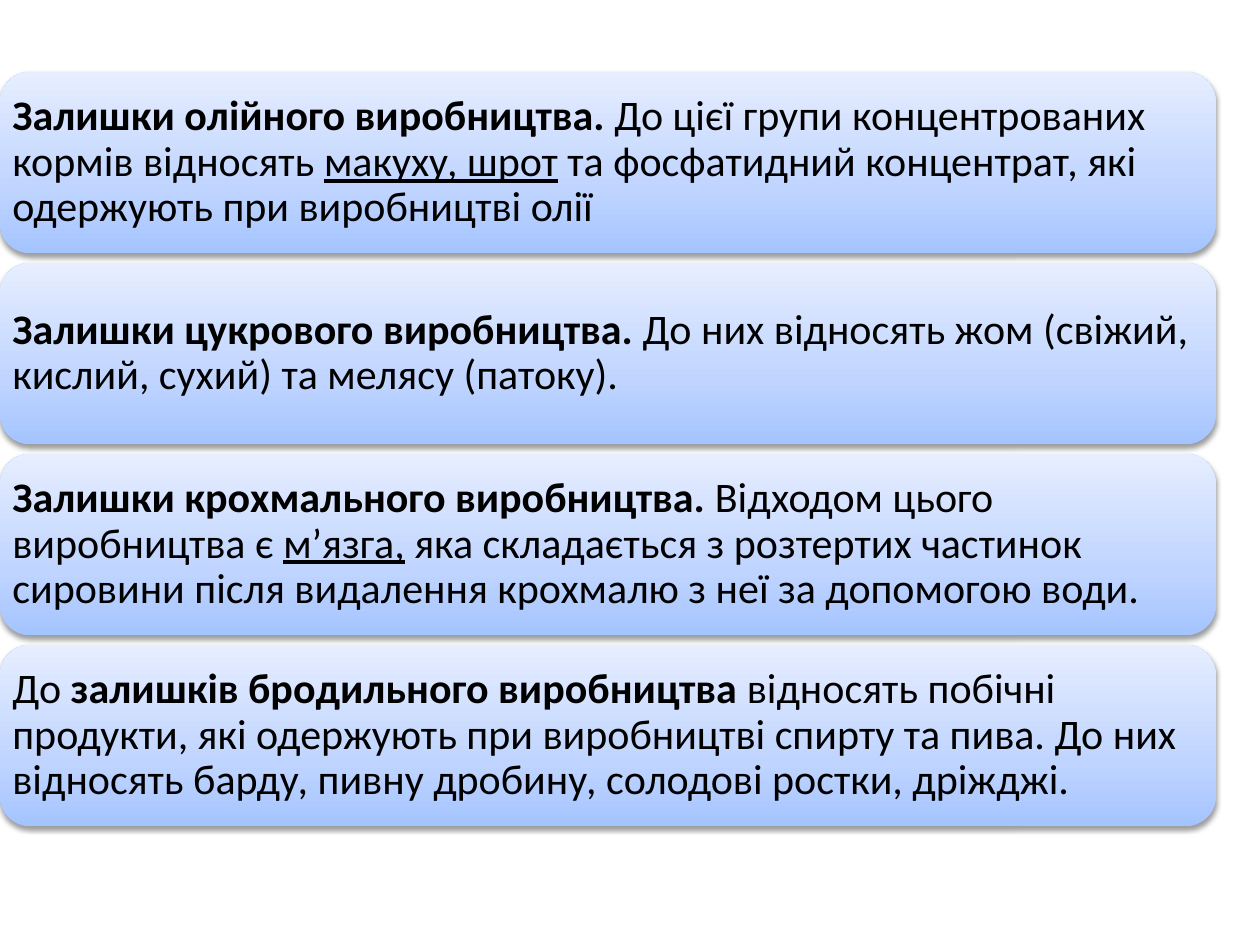
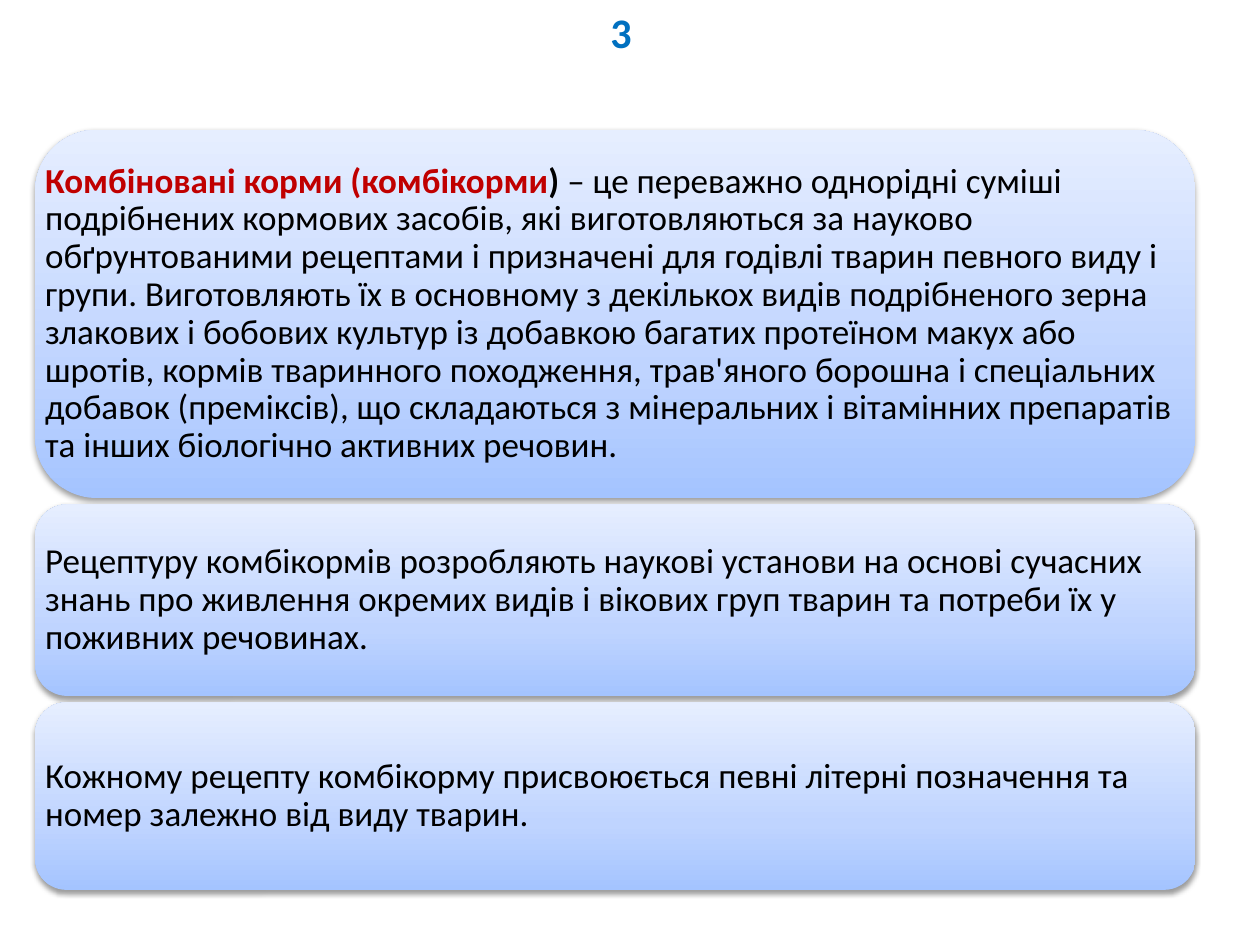
from dataclasses import dataclass

from pptx import Presentation
from pptx.dml.color import RGBColor as RGB
from pptx.enum.shapes import MSO_SHAPE as Preset
from pptx.enum.text import MSO_ANCHOR as Anchor, MSO_AUTO_SIZE as AutoSize, PP_ALIGN as Align
from pptx.oxml import parse_xml
from pptx.oxml.ns import nsdecls, qn
from pptx.util import Cm, Pt


@dataclass(frozen=True)
class Theme:
    font: str = "Calibri"
    text: str = "000000"
    term: str = "C00000"
    number: str = "0070C0"
    large: int = 24
    medium: int = 20
    # Gradient stops of a panel, from bottom to top
    panel: tuple = ((0, "A4C4FF"), (35, "BFD4FF"), (100, "E6EEFF"))


THEME = Theme()

# Run styles
PLAIN = {}
BOLD = {"bold": True}
UNDERLINED = {"underline": True}
TERM = {"bold": True, "color": THEME.term}

RESIDUES = [
    [("Залишки олійного виробництва. ", BOLD),
     ("До цієї групи концентрованих кормів відносять ", PLAIN),
     ("макуху, шрот", UNDERLINED),
     (" та фосфатидний концентрат, які одержують при виробництві олії", PLAIN)],
    [("Залишки цукрового виробництва.", BOLD),
     (" До них відносять жом (свіжий, кислий, сухий) та мелясу (патоку).", PLAIN)],
    [("Залишки крохмального виробництва. ", BOLD),
     ("Відходом цього виробництва є ", PLAIN),
     ("м’язга,", UNDERLINED),
     (" яка складається з розтертих частинок сировини після видалення крохмалю "
      "з неї за допомогою води.", PLAIN)],
    [("До ", PLAIN),
     ("залишків бродильного виробництва ", BOLD),
     ("відносять побічні продукти, які одержують при виробництві спирту та пива. "
      "До них відносять барду, пивну дробину, солодові ростки, дріжджі.", PLAIN)],
]

COMPOUND_FEED = [
    [("Комбіновані корми (комбікорми", TERM),
     (") ", BOLD),
     ("– це переважно однорідні суміші подрібнених кормових засобів, які виготовляються "
      "за науково обґрунтованими рецептами і призначені для годівлі тварин певного виду "
      "і групи. Виготовляють їх в основному з декількох видів подрібненого зерна злакових "
      "і бобових культур із добавкою багатих протеїном макух або шротів, кормів тваринного "
      "походження, трав'яного борошна і спеціальних добавок (преміксів), що складаються "
      "з мінеральних і вітамінних препаратів та інших біологічно активних речовин.", PLAIN)],
    [("Рецептуру комбікормів розробляють наукові установи на основі сучасних знань про "
      "живлення окремих видів і вікових груп тварин та потреби їх у поживних речовинах.", PLAIN)],
    [("Кожному рецепту комбікорму присвоюється певні літерні позначення та номер залежно "
      "від виду тварин.", PLAIN)],
]


def add_run(paragraph, text, size, bold=False, underline=False, color=THEME.text):
    run = paragraph.add_run()
    run.text = text
    font = run.font
    font.name, font.size = THEME.font, Pt(size)
    font.bold, font.underline = bold, underline
    font.color.rgb = RGB.from_string(color)


def add_panel(slide, *box):
    """Rounded panel with a vertical gradient and a soft shadow below."""
    panel = slide.shapes.add_shape(Preset.ROUNDED_RECTANGLE, *box)
    panel.line.fill.background()
    panel.fill.gradient()
    panel.fill.gradient_angle = 90
    properties = panel._element.spPr

    stops = "".join(f'<a:gs pos="{place * 1000}"><a:srgbClr val="{color}"/></a:gs>'
                    for place, color in THEME.panel)
    old_stops = properties.find(qn("a:gradFill")).find(qn("a:gsLst"))
    old_stops.getparent().replace(
        old_stops, parse_xml(f'<a:gsLst {nsdecls("a")}>{stops}</a:gsLst>'))

    panel.shadow.inherit = False
    properties.find(qn("a:effectLst")).append(parse_xml(
        f'<a:outerShdw {nsdecls("a")} blurRad="40000" dist="20000" dir="5400000" '
        'rotWithShape="0"><a:srgbClr val="000000"><a:alpha val="38000"/></a:srgbClr>'
        '</a:outerShdw>'))


def add_statement(slide, runs, size, inset, *box):
    """Text over the full panel, so that round corners do not narrow it."""
    frame = slide.shapes.add_textbox(*box).text_frame
    frame.word_wrap = True
    frame.vertical_anchor = Anchor.MIDDLE
    frame.margin_left = frame.margin_right = Cm(inset)
    frame.margin_top = frame.margin_bottom = Cm(inset)
    paragraph = frame.paragraphs[0]
    paragraph.line_spacing = 0.9
    for text, style in runs:
        add_run(paragraph, text, size, **style)


def add_stack(slide, statements, heights, left, top, width, gap, size, inset):
    """Panels one under another with equal gaps."""
    for runs, height in zip(statements, heights):
        box = Cm(left), Cm(top), Cm(width), Cm(height)
        add_panel(slide, *box)
        add_statement(slide, runs, size, inset, *box)
        top += height + gap


def add_section_number(slide, number):
    frame = slide.shapes.add_textbox(Cm(11.3), Cm(0), Cm(1.7), Cm(1.27)).text_frame
    frame.word_wrap = False
    frame.auto_size = AutoSize.SHAPE_TO_FIT_TEXT
    paragraph = frame.paragraphs[0]
    paragraph.alignment = Align.CENTER
    paragraph._p.get_or_add_pPr().set("indent", str(Cm(0.74)))
    add_run(paragraph, number, THEME.large, bold=True, color=THEME.number)


def main():
    deck = Presentation()
    deck.slide_width, deck.slide_height = Cm(25.4), Cm(19.05)
    blank = deck.slide_layouts[6]

    # Residues of the food industry
    residues = deck.slides.add_slide(blank)
    add_stack(residues, RESIDUES, [3.66] * len(RESIDUES), left=0, top=1.45,
              width=24.51, gap=0.19, size=THEME.large, inset=0.25)

    # Compound feed
    compound_feed = deck.slides.add_slide(blank)
    add_stack(compound_feed, COMPOUND_FEED, [7.42, 3.86, 3.78], left=0.71, top=2.62,
              width=23.39, gap=0.13, size=THEME.medium, inset=0.2)
    add_section_number(compound_feed, "3")

    deck.save("out.pptx")


if __name__ == "__main__":
    main()
